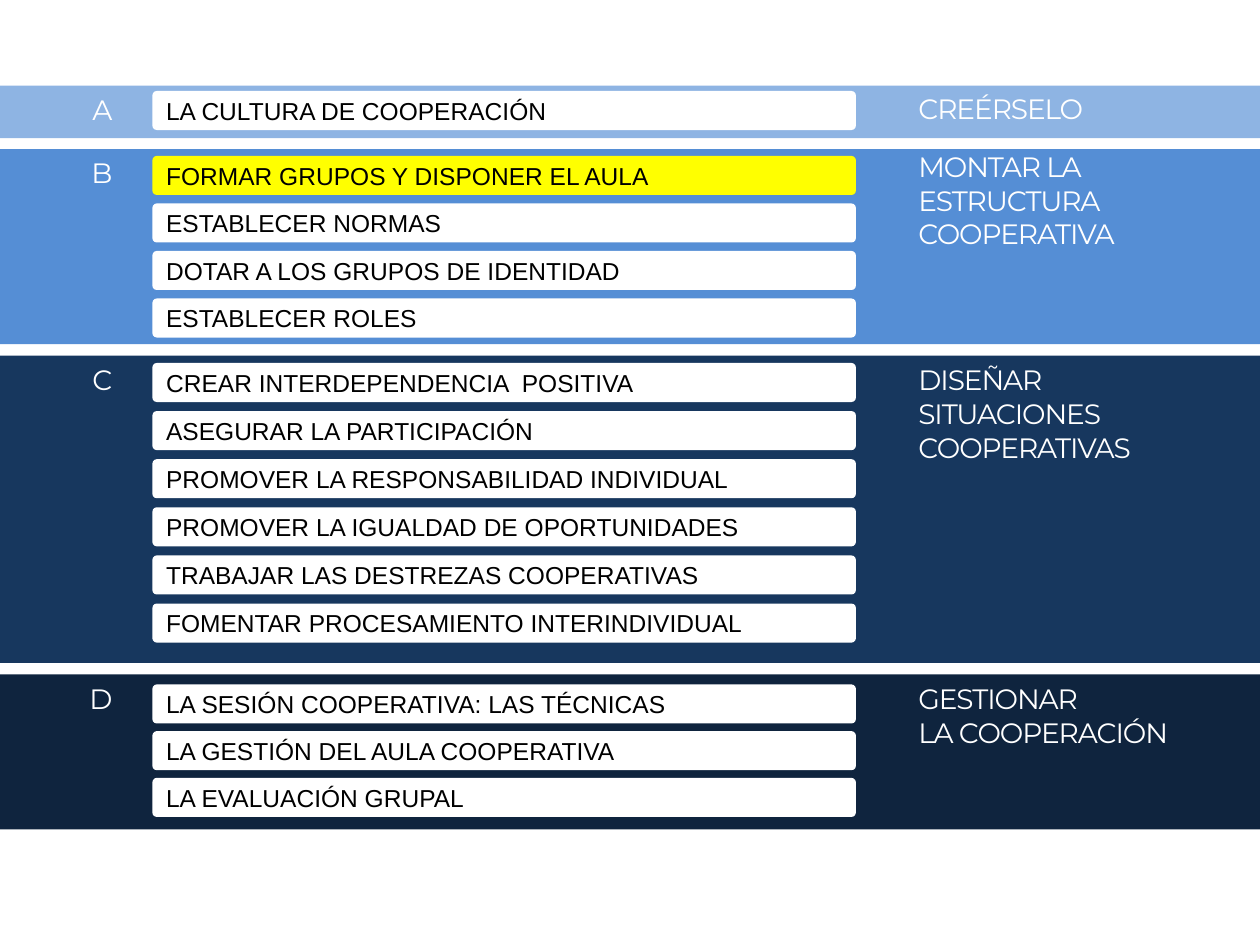
from dataclasses import dataclass

from pptx import Presentation
from pptx.dml.color import RGBColor
from pptx.enum.shapes import MSO_SHAPE as Shape
from pptx.enum.text import MSO_ANCHOR as Anchor, MSO_AUTO_SIZE as Fit, PP_ALIGN as Align
from pptx.util import Pt

LEFT, WIDTH = -25.2, 761.8
BAR_LEFT, BAR_WIDTH, BAR_HEIGHT = 87.1, 402, 22.3
CAP_LEFT = 517.7
WHITE, BLACK, YELLOW = "FFFFFF", "000000", "FFFF00"


@dataclass
class Band:
    letter: str
    caption: str
    bars: list[str]
    fill: str
    top: float
    height: float
    first: float  # top of the first bar
    pitch: float
    cap_top: float
    cap_width: float
    cap_height: float
    marked: int = -1  # index of the highlighted bar


BANDS = [
    Band("B", "MONTAR LA\nESTRUCTURA\nCOOPERATIVA",
         ["FORMAR GRUPOS Y DISPONER EL AULA", "ESTABLECER NORMAS",
          "DOTAR A LOS GRUPOS DE IDENTIDAD", "ESTABLECER ROLES"],
         "558ED5", 85.2, 111.5, 89.1, 27.15, 82.1, 152, 67.7, marked=0),
    Band("D", "GESTIONAR\nLA COOPERACIÓN",
         ["LA SESIÓN COOPERATIVA: LAS TÉCNICAS",
          "LA GESTIÓN DEL AULA COOPERATIVA", "LA EVALUACIÓN GRUPAL"],
         "0F243E", 385.4, 88.5, 391.1, 26.7, 386, 218, 46.2),
    Band("A", "CREÉRSELO", ["LA CULTURA DE COOPERACIÓN"],
         "8EB4E3", 48.9, 30, 52, 27, 49, 152, 26.7),
    Band("C", "DISEÑAR\nSITUACIONES\nCOOPERATIVAS",
         ["CREAR INTERDEPENDENCIA  POSITIVA", "ASEGURAR LA PARTICIPACIÓN",
          "PROMOVER LA RESPONSABILIDAD INDIVIDUAL",
          "PROMOVER LA IGUALDAD DE OPORTUNIDADES",
          "TRABAJAR LAS DESTREZAS COOPERATIVAS",
          "FOMENTAR PROCESAMIENTO INTERINDIVIDUAL"],
         "17375E", 203.2, 175.7, 207.4, 27.5, 203.8, 184, 106.6),
]


def color(code: str) -> RGBColor:
    return RGBColor.from_string(code)


def add_block(group, kind, box: tuple, fill: str, round_by: float):
    block = group.shapes.add_shape(kind, *map(Pt, box))
    block.adjustments[0] = round_by
    block.shadow.inherit = False
    block.fill.solid()
    block.fill.fore_color.rgb = color(fill)
    block.line.fill.background()
    return block


def style(frame, size: float, font: str, code: str, align) -> None:
    for para in frame.paragraphs:
        para.alignment = align
        for run in para.runs:
            run.font.size = Pt(size)
            run.font.name = font
            run.font.color.rgb = color(code)


def add_label(group, text: str, box: tuple, align) -> None:
    frame = group.shapes.add_textbox(*map(Pt, box)).text_frame
    frame.word_wrap = True
    frame.auto_size = Fit.SHAPE_TO_FIT_TEXT
    frame.text = text
    style(frame, 16, "Montserrat", WHITE, align)
    for para in frame.paragraphs:
        for run in para.runs:
            run.font._element.set("spc", "-60")


def add_bar(group, text: str, top: float, fill: str) -> None:
    box = (BAR_LEFT, top, BAR_WIDTH, BAR_HEIGHT)
    frame = add_block(group, Shape.DOUBLE_BRACKET, box, fill, 0.113).text_frame
    frame.margin_left, frame.margin_right = Pt(7.2), Pt(17.3)
    frame.margin_top = frame.margin_bottom = Pt(3.6)
    frame.vertical_anchor = Anchor.MIDDLE
    frame.text = text
    style(frame, 14, "Arial", BLACK, Align.LEFT)


def add_band(slide, band: Band) -> None:
    group = slide.shapes.add_group_shape()
    add_block(group, Shape.ROUNDED_RECTANGLE,
              (LEFT, band.top, WIDTH, band.height), band.fill, 0)
    add_label(group, band.caption,
              (CAP_LEFT, band.cap_top, band.cap_width, band.cap_height), Align.LEFT)
    add_label(group, band.letter, (LEFT, band.top + 0.4, 96.5, 26.7), Align.RIGHT)
    for i, text in enumerate(band.bars):
        fill = YELLOW if i == band.marked else WHITE
        add_bar(group, text, band.first + i * band.pitch, fill)


def main() -> None:
    deck = Presentation()
    deck.slide_width, deck.slide_height = Pt(720), Pt(540)
    slide = deck.slides.add_slide(deck.slide_layouts[6])
    for band in BANDS:
        add_band(slide, band)
    deck.save("out.pptx")


if __name__ == "__main__":
    main()
